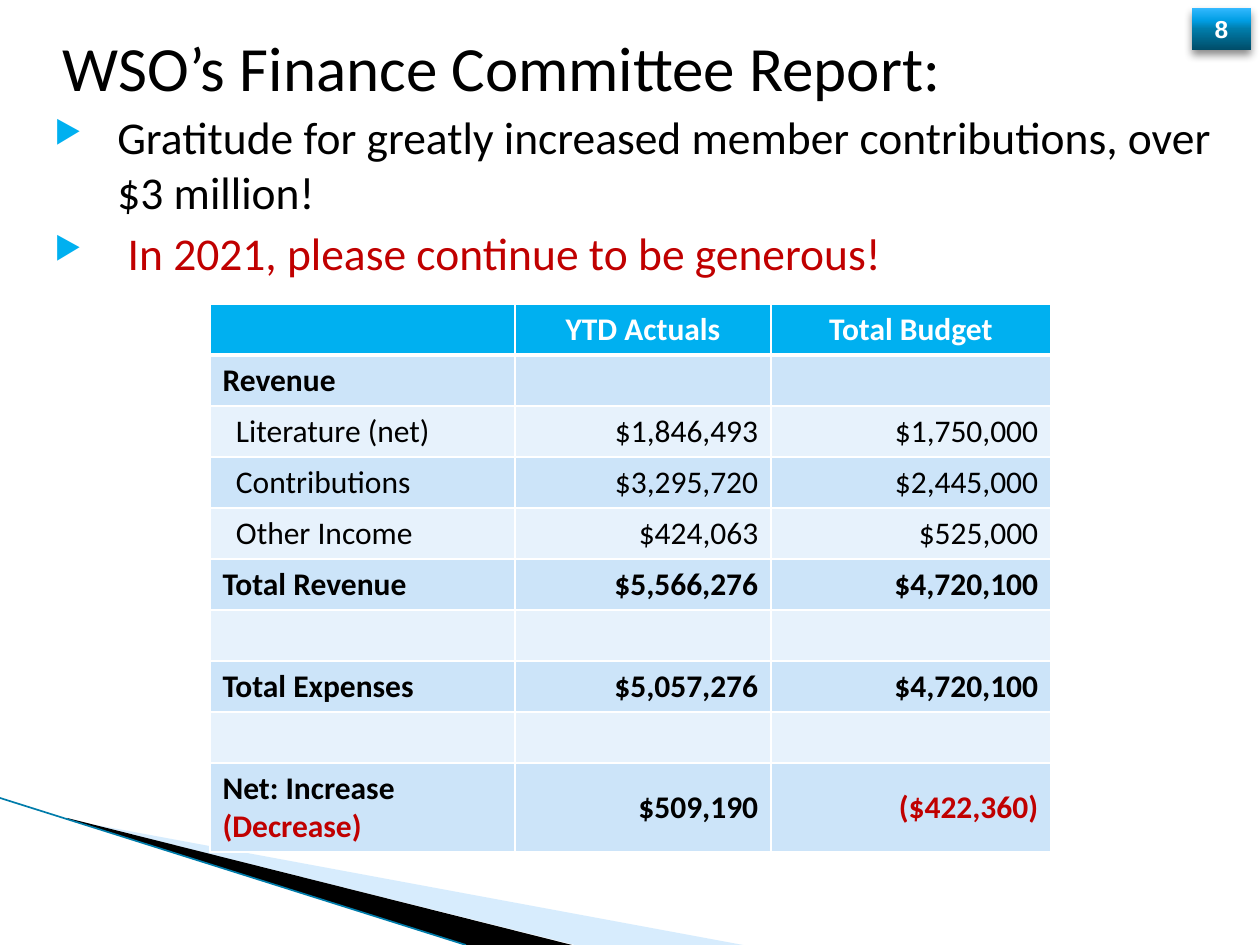
"""Build the finance committee report slide with its budget table."""
from pptx import Presentation
from pptx import util as u
from pptx.dml.color import RGBColor
from pptx.enum import shapes, text
from pptx.oxml import parse_xml
from pptx.oxml.ns import nsdecls

HUE = {"black": "000000", "white": "FFFFFF", "red": "C00000", "head": "00B0F0",
       "dark": "CCE4F9", "light": "E7F2FC", "wedge": "9BD1FC", "edge": "007CAA"}
PX = 914400 / 126


def put(par, words, size, hue="black", bold=False, face="Calibri"):
    run = par.add_run()
    run.text = words
    run.font.size = u.Pt(size)
    run.font.name = face
    run.font.bold = bold
    run.font.color.rgb = RGBColor.from_string(HUE[hue])


def add(root, tag, attrs="", body=""):
    root.append(parse_xml(f"<a:{tag} {nsdecls('a')} {attrs}>{body}</a:{tag}>"))


deck = Presentation()
deck.slide_width, deck.slide_height = (u.Emu(round(n * PX)) for n in (1260, 945))
slide = deck.slides.add_slide(deck.slide_layouts[6])
tree = slide.shapes

wedges = [("wedge", [(69, 820), (743, 945), (575, 945), (69, 819)]),
          ("black", [(67, 818), (572, 945), (466, 945), (68, 819)])]
for hue, points in wedges:
    build = tree.build_freeform(*points[0], scale=PX)
    build.add_line_segments(points[1:], close=True)
    wedge = build.convert_to_shape()
    wedge.shadow.inherit = False
    wedge.line.fill.background()
    wedge.fill.solid()
    wedge.fill.fore_color.rgb = RGBColor.from_string(HUE[hue])
    if hue == "wedge":
        color = wedge.fill._xPr.find(".//{*}srgbClr")
        add(color, "alpha", 'val="40000"')

ends = [u.Emu(round(n * PX)) for n in (0, 798, 466, 945)]
edge = tree.add_connector(shapes.MSO_CONNECTOR.STRAIGHT, *ends)
edge.line.color.rgb = RGBColor.from_string(HUE["edge"])
edge.line.width = u.Pt(0.95)
add(edge._element.spPr, "effectLst")

spot = [u.Emu(round(n * PX)) for n in (1192, 8, 59, 42)]
badge = tree.add_shape(shapes.MSO_SHAPE.RECTANGLE, *spot)
badge.line.fill.background()
props = badge._element.spPr
line = props.find("{*}ln")
props.remove(line)
stops = [(0, "004D69"), (50, "007CAA"), (70, "009EE4"), (100, "34B9FF")]
marks = "".join(f'<a:gs pos="{at * 1000}"><a:srgbClr val="{tone}"/></a:gs>'
                for at, tone in stops)
add(props, "gradFill", 'rotWithShape="1"',
    f'<a:gsLst>{marks}</a:gsLst><a:lin ang="16200000" scaled="0"/>')
props.append(line)
add(props, "effectLst", "",
    '<a:outerShdw blurRad="63500" dist="38100" dir="5400000" rotWithShape="0">'
    '<a:srgbClr val="000000"><a:alpha val="45000"/></a:srgbClr></a:outerShdw>')
frame = badge.text_frame
frame.margin_left = frame.margin_right = 0
frame.vertical_anchor = text.MSO_ANCHOR.MIDDLE
par = frame.paragraphs[0]
par.alignment = text.PP_ALIGN.CENTER
put(par, "8", 14, "white", True, "Arial")

spot = [u.Emu(round(n * PX)) for n in (23, 103, 1215, 748)]
frame = tree.add_textbox(*spot).text_frame
frame.word_wrap = True
points = [[("Gratitude for greatly increased member contributions, over $3 million!",
            "black")],
          [(" ", "black"), ("In 2021, please continue to be generous!", "red")]]
for n, runs in enumerate(points):
    par = frame.add_paragraph() if n else frame.paragraphs[0]
    if n:
        par.space_before = u.Pt(4)
    props = par._p.get_or_add_pPr()
    props.set("marL", str(u.Inches(0.65)))
    props.set("indent", str(u.Inches(-0.5)))
    add(props, "buClr", "", f'<a:srgbClr val="{HUE["head"]}"/>')
    add(props, "buSzPct", 'val="68000"')
    add(props, "buChar", 'char="▶"')
    for words, hue in runs:
        put(par, words, 26, hue)

spot = [u.Emu(round(n * PX)) for n in (50, 28, 1125, 77)]
frame = tree.add_textbox(*spot).text_frame
frame.word_wrap = True
frame.vertical_anchor = text.MSO_ANCHOR.MIDDLE
put(frame.paragraphs[0], "WSO’s Finance Committee Report:", 36)

rows = [("", "YTD Actuals", "Total Budget"),
        ("Revenue", "", ""),
        ("Literature (net)", "$1,846,493", "$1,750,000"),
        ("Contributions", "$3,295,720", "$2,445,000"),
        ("Other Income", "$424,063", "$525,000"),
        ("Total Revenue", "$5,566,276", "$4,720,100"),
        ("", "", ""),
        ("Total Expenses", "$5,057,276", "$4,720,100"),
        ("", "", ""),
        ("Net: Increase (Decrease)", "$509,190", "($422,360)")]
items = (2, 3, 4)
last = len(rows) - 1
spot = [u.Emu(round(n * PX)) for n in (210, 304, 841, 548)]
grid = tree.add_table(len(rows), 3, *spot).table
for col, wide in zip(grid.columns, (305, 256, 280)):
    col.width = u.Emu(round(wide * PX))
for r, row in enumerate(rows):
    grid.rows[r].height = u.Emu(round((89 if r == last else 51) * PX))
    for c, words in enumerate(row):
        cell = grid.cell(r, c)
        props = cell._tc.get_or_add_tcPr()
        for side in "LRTB":
            thick = (r, side) in ((0, "B"), (1, "T"))
            add(props, f"ln{side}", f'w="{38100 if thick else 12700}"',
                f'<a:solidFill><a:srgbClr val="{HUE["white"]}"/></a:solidFill>')
        cell.fill.solid()
        tone = "head" if r == 0 else "dark" if r % 2 else "light"
        cell.fill.fore_color.rgb = RGBColor.from_string(HUE[tone])
        if r == last:
            cell.vertical_anchor = text.MSO_ANCHOR.MIDDLE
        if r in items and c == 0:
            cell.margin_left = u.Emu(round(26 * PX))
        par = cell.text_frame.paragraphs[0]
        if c or r == 0:
            par.alignment = text.PP_ALIGN.RIGHT if r else text.PP_ALIGN.CENTER
        plain, mark, loss = words.partition("(") if r == last else (words, "", "")
        for part, hue in ((plain, "black" if r else "white"), (mark + loss, "red")):
            if part:
                put(par, part, 18, hue, r not in items)

deck.save("out.pptx")
